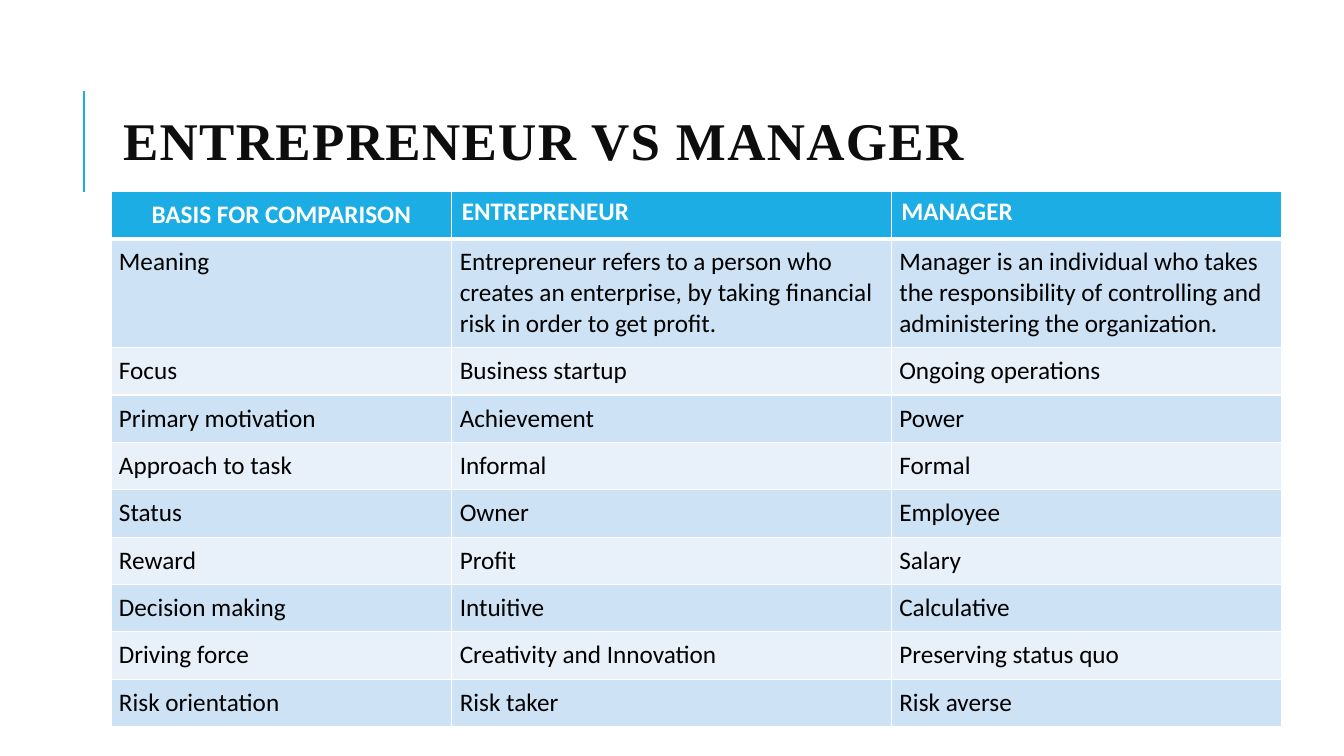
import dataclasses

import lxml.etree
import pptx
import pptx.dml.color
import pptx.enum.shapes
import pptx.enum.text
import pptx.oxml.ns
import pptx.util

Inches = pptx.util.Inches
Pt = pptx.util.Pt
qn = pptx.oxml.ns.qn
ALIGN = pptx.enum.text.PP_ALIGN
ANCHOR = pptx.enum.text.MSO_ANCHOR


@dataclasses.dataclass(frozen=True)
class Theme:
    """Colours, fonts and type sizes."""
    accent: str = "1CADE4"
    dark: str = "CDE3F5"
    light: str = "E8F1FA"
    white: str = "FFFFFF"
    ink: str = "000000"
    head: str = "0D0D0D"
    serif: str = "Times New Roman"
    sans: str = "Calibri"
    big: float = 37.8
    small: float = 18


THEME = Theme()
WIDTHS = (3.38, 4.36, 3.87)
ROW, TALL = 0.47, 1.08
ROWS = (
    ("BASIS FOR COMPARISON", "ENTREPRENEUR", "MANAGER"),
    ("Meaning",
     "Entrepreneur refers to a person who creates an enterprise, "
     "by taking financial risk in order to get profit.",
     "Manager is an individual who takes the responsibility of "
     "controlling and administering the organization."),
    ("Focus", "Business startup", "Ongoing operations"),
    ("Primary motivation", "Achievement", "Power"),
    ("Approach to task", "Informal", "Formal"),
    ("Status", "Owner", "Employee"),
    ("Reward", "Profit", "Salary"),
    ("Decision making", "Intuitive", "Calculative"),
    ("Driving force", "Creativity and Innovation", "Preserving status quo"),
    ("Risk orientation", "Risk taker", "Risk averse"),
)


def color(code):
    """Turn a hex code into a colour."""
    return pptx.dml.color.RGBColor.from_string(code)


def style(para, face, size, code, bold):
    """Format every run of a paragraph."""
    for run in para.runs:
        run.font.name = face
        run.font.size = Pt(size)
        run.font.bold = bold
        run.font.color.rgb = color(code)


def add_title(slide, text):
    """Fill and place the title."""
    title = slide.shapes.title
    title.left, title.top = Inches(1.12), Inches(0.64)
    title.width, title.height = Inches(11.76), Inches(1.64)
    frame = title.text_frame
    frame.text = text
    frame.word_wrap = True
    frame.auto_size = pptx.enum.text.MSO_AUTO_SIZE.NONE
    frame.vertical_anchor = ANCHOR.MIDDLE
    frame.margin_bottom = Inches(0.21)
    para = frame.paragraphs[0]
    para.alignment = ALIGN.LEFT
    style(para, THEME.serif, THEME.big, THEME.head, True)
    for run in para.runs:
        run.font._element.set("spc", "100")


def add_rule(slide):
    """Draw the upright line beside the title."""
    rule = slide.shapes.add_connector(
        pptx.enum.shapes.MSO_CONNECTOR.STRAIGHT,
        Inches(0.83), Inches(1.9), Inches(0.83), Inches(0.9))
    rule.line.color.rgb = color(THEME.accent)
    rule.line.width = Pt(1.5)
    lxml.etree.SubElement(rule._element.spPr, qn("a:effectLst"))


def set_edges(cell, top, bottom):
    """Give a cell white borders."""
    props = cell._tc.get_or_add_tcPr()
    for side, width in (("L", 1), ("R", 1), ("T", top), ("B", bottom)):
        edge = lxml.etree.SubElement(props, qn("a:ln" + side), w=str(Pt(width)))
        fill = lxml.etree.SubElement(edge, qn("a:solidFill"))
        lxml.etree.SubElement(fill, qn("a:srgbClr"), val=THEME.white)


def fill_cell(cell, text, row, col):
    """Write and format one table cell."""
    head = row == 0
    cell.text = text
    para = cell.text_frame.paragraphs[0]
    style(para, THEME.sans, THEME.small,
          THEME.white if head else THEME.ink, head)
    if not head or col == 0:
        cell.margin_left = cell.margin_right = Inches(0.08)
        cell.margin_top = cell.margin_bottom = Inches(0.08)
    if head and col == 0:
        para.alignment = ALIGN.CENTER
        cell.vertical_anchor = ANCHOR.MIDDLE
    set_edges(cell, 3 if row == 1 else 1, 3 if head else 1)
    band = THEME.dark if row % 2 else THEME.light
    cell.fill.solid()
    cell.fill.fore_color.rgb = color(THEME.accent if head else band)


def add_grid(slide):
    """Build the comparison table."""
    tall = ROW * (len(ROWS) - 1) + TALL
    grid = slide.shapes.add_table(
        len(ROWS), len(WIDTHS), Inches(1.1), Inches(1.9),
        Inches(sum(WIDTHS)), Inches(tall)).table
    for col, width in enumerate(WIDTHS):
        grid.columns[col].width = Inches(width)
    for row, texts in enumerate(ROWS):
        grid.rows[row].height = Inches(TALL if row == 1 else ROW)
        for col, text in enumerate(texts):
            fill_cell(grid.cell(row, col), text, row, col)


def main():
    """Build and save the slide."""
    deck = pptx.Presentation()
    deck.slide_width, deck.slide_height = Inches(13.33), Inches(7.5)
    slide = deck.slides.add_slide(deck.slide_layouts[5])
    add_rule(slide)
    add_title(slide, "ENTREPRENEUR VS MANAGER")
    add_grid(slide)
    deck.save("out.pptx")


if __name__ == "__main__":
    main()
